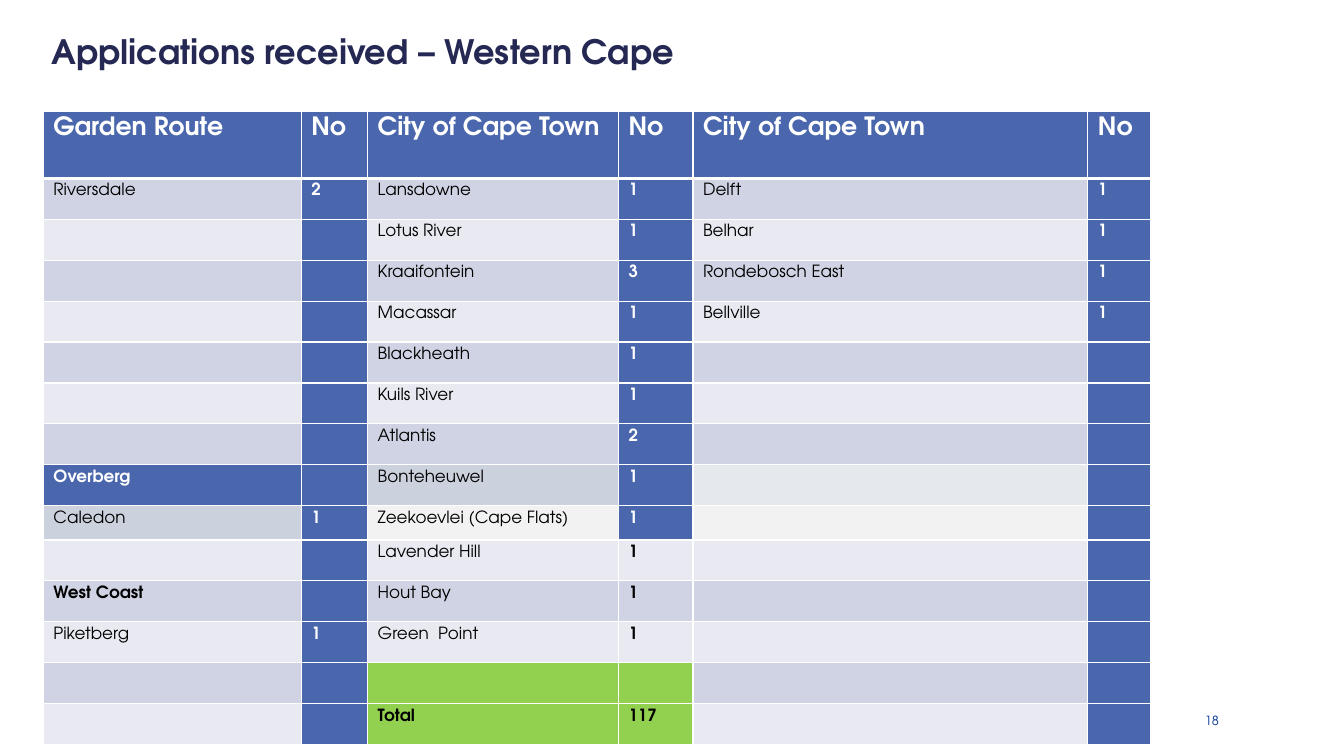
from lxml.etree import SubElement
from pptx import Presentation
from pptx.dml.color import RGBColor as RGB
from pptx.enum.text import MSO_ANCHOR as Anchor, PP_ALIGN as Align
from pptx.oxml.ns import qn
from pptx.util import Inches, Pt

FONT = "TeX Gyre Adventor"
NAVY = RGB(0x24, 0x28, 0x52)
BLUE = RGB(0x4A, 0x66, 0xAC)
LINK = RGB(0x00, 0x33, 0x99)
WHITE = RGB(0xFF, 0xFF, 0xFF)
BLACK = RGB(0x00, 0x00, 0x00)
GREEN = RGB(0x92, 0xD0, 0x50)
DARK = RGB(0xD0, 0xD3, 0xE3)
LIGHT = RGB(0xE9, 0xEA, 0xF1)
STEEL = RGB(0xCC, 0xD2, 0xDD)
MIST = RGB(0xE5, 0xE9, 0xEE)
GRAY = RGB(0xF2, 0xF2, 0xF2)

WIDE, HIGH = Inches(13.33), Inches(7.5)
COL, ROW = WIDE / 160, HIGH / 90

HEAD = ["Garden Route", "No", "City of Cape Town", "No", "City of Cape Town", "No"]
ROUTE = {1: ("Riversdale", "2"), 8: ("Overberg", ""), 9: ("Caledon", "1"),
         11: ("West Coast", ""), 12: ("Piketberg", "1")}
TOWN = [("Lansdowne", "1"), ("Lotus River", "1"), ("Kraaifontein", "3"),
        ("Macassar", "1"), ("Blackheath", "1"), ("Kuils River", "1"),
        ("Atlantis", "2"), ("Bonteheuwel", "1"), ("Zeekoevlei (Cape Flats)", "1"),
        ("Lavender Hill", "1"), ("Hout Bay", "1"), ("Green  Point", "1"),
        ("", ""), ("Total", "117")]
EAST = ["Delft", "Belhar", "Rondebosch East", "Bellville"]
BOLD = ("West Coast", "Total")
SHARES = [2.56, 0.66, 2.49, 0.74, 3.92, 0.62]
TOP, SHORT = 7.92, 4.08
TINTS = {(8, 0): BLUE, (8, 2): STEEL, (8, 4): MIST,
         (9, 0): STEEL, (9, 2): GRAY, (9, 4): GRAY,
         (13, 2): GREEN, (13, 3): GREEN, (14, 2): GREEN, (14, 3): GREEN}


def place(box):
    left, top, wide, high = box
    return [round(v) for v in (left * COL, top * ROW, wide * COL, high * ROW)]


def write(frame, text, size=12, color=BLACK, bold=False, align=Align.LEFT):
    par = frame.paragraphs[0]
    par.alignment = align
    if not text:
        SubElement(par._p, qn("a:endParaRPr"), sz=str(size * 100))
        return
    run = par.add_run()
    run.text = text
    font = run.font
    font.name, font.size, font.bold = FONT, Pt(size), bold
    font.color.rgb = color


def label(slide, box, text, low=0.08, **form):
    frame = slide.shapes.add_textbox(*place(box)).text_frame
    frame.word_wrap = True
    frame.vertical_anchor = Anchor.MIDDLE
    frame.margin_left = frame.margin_top = Inches(0.08)
    frame.margin_right = frame.margin_bottom = Inches(low)
    write(frame, text, **form)


def edge(cell, row):
    props = cell._tc.get_or_add_tcPr()
    thick = {"T": row == 1, "B": row == 0}
    for side in "LRTB":
        width = Pt(3 if thick.get(side) else 1)
        line = SubElement(props, qn("a:ln" + side), w=str(width))
        fill = SubElement(line, qn("a:solidFill"))
        SubElement(fill, qn("a:srgbClr"), val=str(WHITE))


def tint(row, col):
    if (row, col) in TINTS:
        return TINTS[row, col]
    if row == 0 or col in (1, 5) or (col == 3 and row < 10):
        return BLUE
    return DARK if row % 2 else LIGHT


def entries():
    rows = [HEAD]
    for num, town in enumerate(TOWN, 1):
        east = (EAST[num - 1], "1") if num <= len(EAST) else ("", "")
        rows.append([*ROUTE.get(num, ("", "")), *town, *east])
    return rows


def grid(slide, box):
    rows = entries()
    table = slide.shapes.add_table(len(rows), len(HEAD), *place(box)).table
    for part, share in zip(table.columns, SHARES):
        part.width = round(box[2] * COL * share / sum(SHARES))
    plain = (box[3] - TOP - SHORT) / (len(rows) - 2)
    for num, part in enumerate(table.rows):
        part.height = round({0: TOP, 9: SHORT}.get(num, plain) * ROW)
    for row, texts in enumerate(rows):
        for col, text in enumerate(texts):
            cell, hue = table.cell(row, col), tint(row, col)
            edge(cell, row)
            cell.fill.solid()
            cell.fill.fore_color.rgb = hue
            write(cell.text_frame, text, size=12 if row else 18,
                  color=WHITE if hue == BLUE else BLACK,
                  bold=hue == BLUE or col % 2 == 1 or text in BOLD)


def main():
    deck = Presentation()
    deck.slide_width, deck.slide_height = WIDE, HIGH
    slide = deck.slides.add_slide(deck.slide_layouts[6])
    label(slide, (5.16, 2.4, 150.5, 7.32), "Applications received – Western Cape",
          size=24, color=NAVY, bold=True)
    label(slide, (136.1, 83.76, 9, 3), "18", low=0,
          size=9, color=LINK, align=Align.RIGHT)
    grid(slide, (5.16, 13.32, 131.8, 75.36))
    deck.save("out.pptx")


if __name__ == "__main__":
    main()
